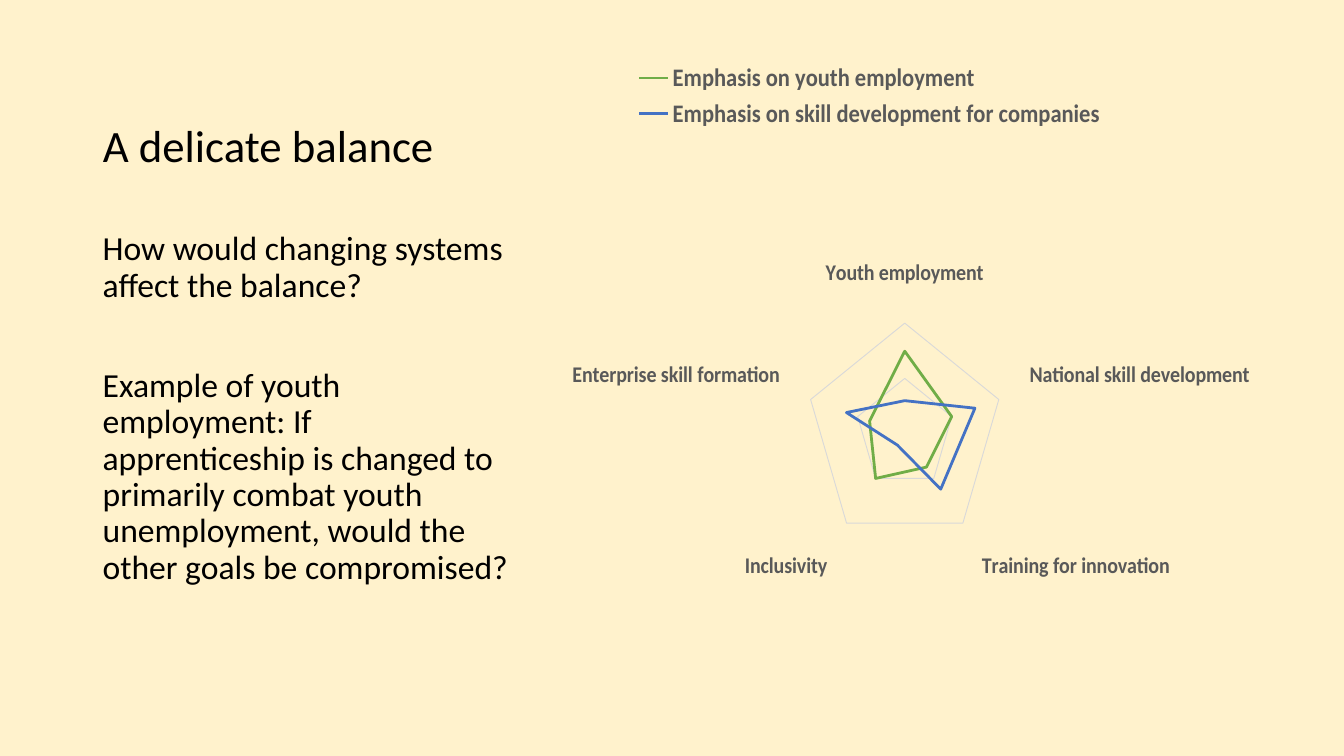
"""Build a slide on the balance between apprenticeship goals, with a radar chart."""
import dataclasses

import pptx
import pptx.chart.data
import pptx.dml.color
import pptx.enum.chart
import pptx.enum.text
import pptx.util

Inches = pptx.util.Inches
Pt = pptx.util.Pt
Color = pptx.dml.color.RGBColor.from_string


@dataclasses.dataclass(frozen=True)
class Theme:
    font: str = "Calibri"
    background: str = "FFF2CC"
    text: str = "000000"
    label: str = "595959"
    grid: str = "D9D9D9"
    youth: str = "70AD47"
    skills: str = "4472C4"
    title_size: int = 32
    body_size: int = 24
    legend_size: int = 18
    category_size: int = 16
    chart_size: int = 10


theme = Theme()


def style_font(font, size, color, bold=False):
    font.name = theme.font
    font.size = Pt(size)
    font.bold = bold
    font.color.rgb = Color(color)


def style_grid(line):
    line.color.rgb = Color(theme.grid)
    line.width = Pt(0.75)


presentation = pptx.Presentation()
presentation.slide_width = Inches(13.33)
presentation.slide_height = Inches(7.5)
slide = presentation.slides.add_slide(presentation.slide_layouts[5])
slide.background.fill.solid()
slide.background.fill.fore_color.rgb = Color(theme.background)

title = slide.shapes.title
title.left, title.top = Inches(0.92), Inches(0.5)
title.width, title.height = Inches(4.3), Inches(1.75)
title_frame = title.text_frame
title_frame.vertical_anchor = pptx.enum.text.MSO_ANCHOR.BOTTOM
title_frame.margin_bottom = Inches(0.54)
paragraph = title_frame.paragraphs[0]
paragraph.alignment = pptx.enum.text.PP_ALIGN.LEFT
paragraph.line_spacing = 0.9
run = paragraph.add_run()
run.text = "A delicate balance"
style_font(run.font, theme.title_size, theme.text)

body = slide.shapes.add_textbox(Inches(0.92), Inches(2.25), Inches(4.3), Inches(4.17))
body_frame = body.text_frame
body_frame.word_wrap = True
questions = [
    ("How would changing systems affect the balance?", 10),
    ("Example of youth employment: If apprenticeship is changed to primarily combat "
     "youth unemployment, would the other goals be compromised?", 46),
]
for index, (question, space_before) in enumerate(questions):
    paragraph = body_frame.add_paragraph() if index else body_frame.paragraphs[0]
    paragraph.line_spacing = 0.9
    paragraph.space_before = Pt(space_before)
    run = paragraph.add_run()
    run.text = question
    style_font(run.font, theme.body_size, theme.text)

emphases = [
    ("Emphasis on youth employment", (100, 67, 50, 67, 50), theme.youth),
    ("Emphasis on skill development for companies", (40, 100, 83, 17, 83), theme.skills),
]
chart_data = pptx.chart.data.CategoryChartData()
chart_data.categories = [
    "Youth employment",
    "National skill development",
    "Training for innovation",
    "Inclusivity",
    "Enterprise skill formation",
]
for name, values, color in emphases:
    chart_data.add_series(name, values)

chart = slide.shapes.add_chart(
    pptx.enum.chart.XL_CHART_TYPE.RADAR,
    Inches(5.56), Inches(0.5), Inches(6.86), Inches(6.5), chart_data,
).chart
style_font(chart.font, theme.chart_size, theme.text)
chart.has_title = False
chart.has_legend = True
chart.legend.position = pptx.enum.chart.XL_LEGEND_POSITION.TOP
chart.legend.include_in_layout = False
style_font(chart.legend.font, theme.legend_size, theme.label, bold=True)

category_axis = chart.category_axis
category_axis.major_tick_mark = pptx.enum.chart.XL_TICK_MARK.NONE
category_axis.has_major_gridlines = True
style_font(category_axis.tick_labels.font, theme.category_size, theme.label, bold=True)
style_grid(category_axis.format.line)
style_grid(category_axis.major_gridlines.format.line)

value_axis = chart.value_axis
value_axis.minimum_scale = 0
value_axis.maximum_scale = 134
value_axis.major_unit = 67
value_axis.has_major_gridlines = True
style_grid(value_axis.major_gridlines.format.line)
value_axis.visible = False

for series, (name, values, color) in zip(chart.plots[0].series, emphases):
    series.smooth = False
    series.marker.style = pptx.enum.chart.XL_MARKER_STYLE.NONE
    series.format.line.color.rgb = Color(color)
    series.format.line.width = Pt(2.25)

presentation.save("out.pptx")
